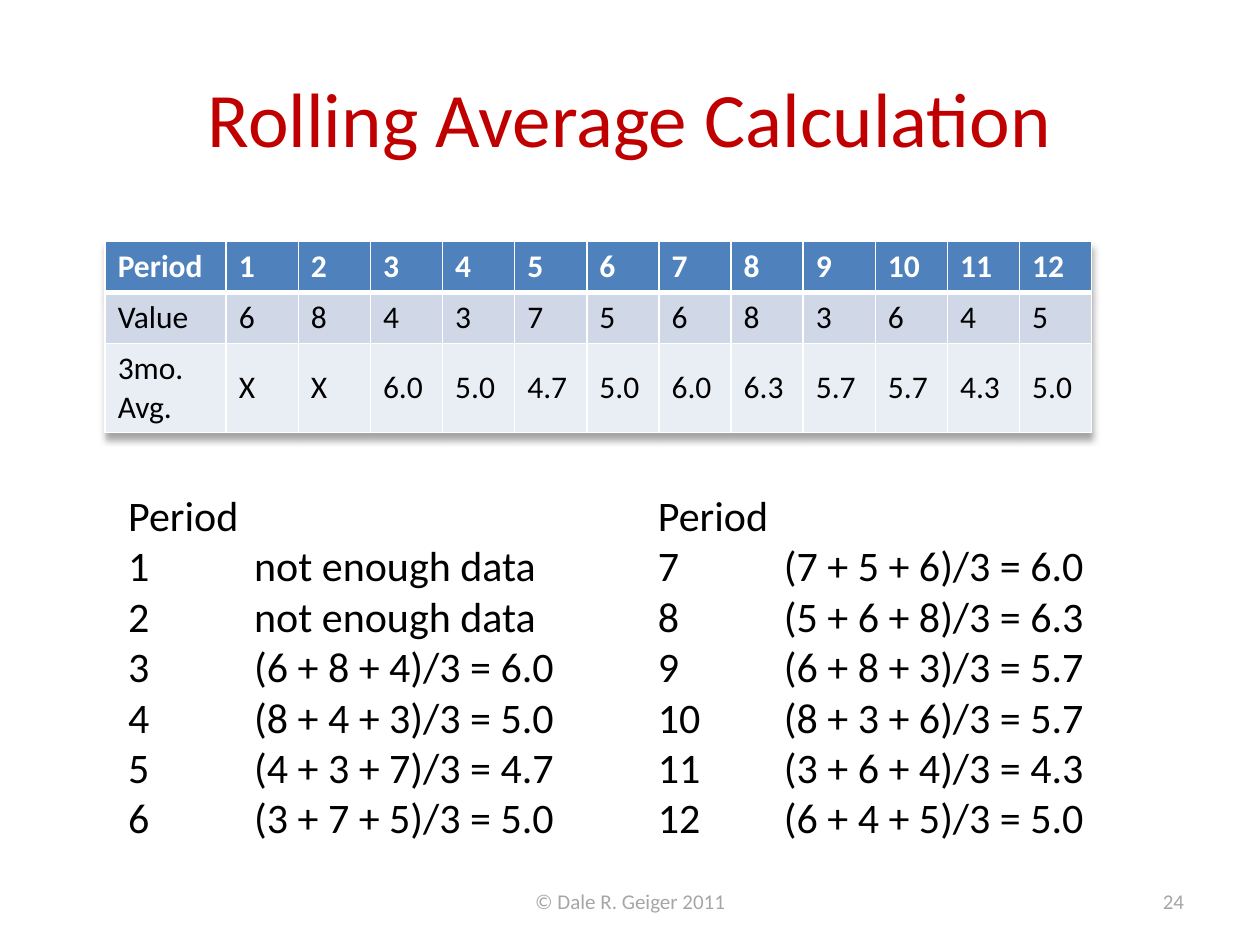
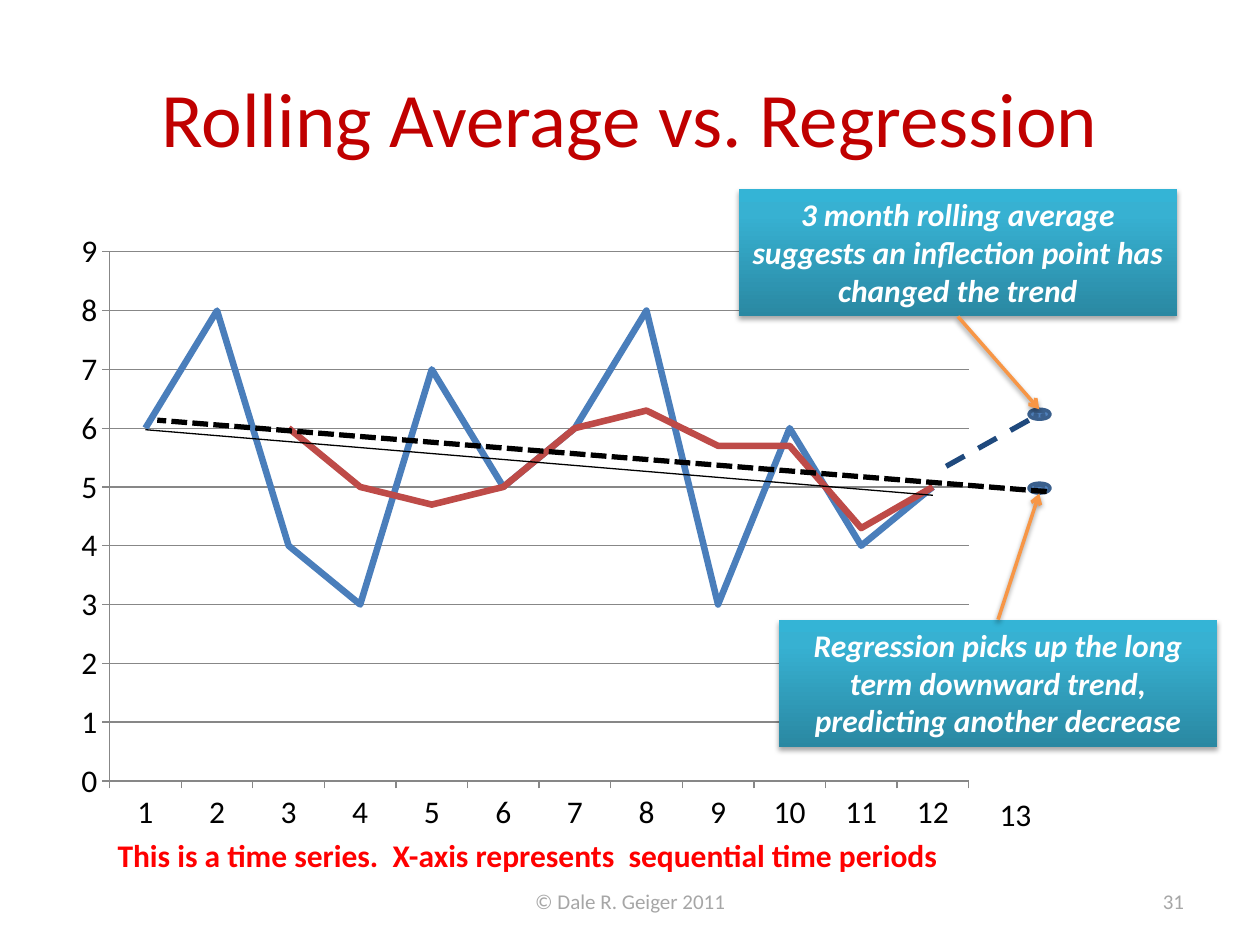
import copy

import pptx
import pptx.chart.data
import pptx.dml.color
import pptx.enum.chart
import pptx.enum.dml
import pptx.enum.shapes
import pptx.enum.text
import pptx.oxml
import pptx.oxml.ns
import pptx.util
from lxml import etree

Cm, Pt = pptx.util.Cm, pptx.util.Pt
qn = pptx.oxml.ns.qn
ALIGN = pptx.enum.text.PP_ALIGN
ANCHOR = pptx.enum.text.MSO_ANCHOR
DASH = pptx.enum.dml.MSO_LINE
SHAPE = pptx.enum.shapes.MSO_SHAPE

COLOURS = {
    "title": "C00000", "footer": "A6A6A6", "text": "000000", "light": "FFFFFF",
    "note": "FF0000", "header": "4F81BD", "band": "D0D8E8", "pale": "E9EDF4",
    "value": "4A7EBB", "average": "BE4B48", "grid": "878787", "point": "4F81BD",
    "rim": "3A5F8C", "forecast": "1F497D", "arrow": "F79646",
}
CALLOUT_GRADIENT = [(0, "2A88A2"), (0.8, "37B1D2"), (1, "34B4D6")]

# Shared text formats
TITLE = {"size": Pt(44), "color": "title"}
FOOTER = {"size": Pt(12), "color": "footer"}
LIST = {"size": Pt(24), "color": "text"}
LABEL = {"size": Pt(18), "color": "text"}
HEADER = {"size": Pt(18), "color": "light", "bold": True}
NOTE = {"size": Pt(18), "color": "note", "bold": True}
CALLOUT = {"size": Pt(18), "color": "light", "bold": True, "italic": True}

# The time series and its three-month rolling average
VALUES = [6, 8, 4, 3, 7, 5, 6, 8, 3, 6, 4, 5]
PERIODS = range(1, len(VALUES) + 1)
AVERAGES = [None if n < 3 else round(sum(VALUES[n - 3:n]) / 3, 1) for n in PERIODS]


def rgb(name):
    return pptx.dml.color.RGBColor.from_string(COLOURS.get(name, name))


def set_font(font, style):
    font.name = "Calibri"
    for attribute, value in style.items():
        if attribute == "color":
            font.color.rgb = rgb(value)
        else:
            setattr(font, attribute, value)


def write(frame, lines, style, align=ALIGN.LEFT):
    frame.text = "\n".join(lines)
    for paragraph in frame.paragraphs:
        paragraph.alignment = align
        for run in paragraph.runs:
            set_font(run.font, style)


def place(shape, box):
    for attribute, value in zip(("left", "top", "width", "height"), box):
        setattr(shape, attribute, Cm(value))


def add_effects(properties, shadow=None):
    """Append an effect list; shadow is opacity in percent, blur and distance in points."""
    effects = etree.SubElement(properties, qn("a:effectLst"))
    if shadow:
        opacity, blur, distance = shadow
        outer = etree.SubElement(effects, qn("a:outerShdw"), blurRad=str(Pt(blur)),
                                 dist=str(Pt(distance)), dir="5400000", rotWithShape="0")
        black = etree.SubElement(outer, qn("a:srgbClr"), val=COLOURS["text"])
        etree.SubElement(black, qn("a:alpha"), val=str(opacity * 1000))
    return effects


def add_text(slide, box, text, style, align=ALIGN.LEFT, anchor=ANCHOR.TOP, wrap=True):
    textbox = slide.shapes.add_textbox(*map(Cm, box))
    textbox.text_frame.word_wrap = wrap
    textbox.text_frame.vertical_anchor = anchor
    write(textbox.text_frame, [text], style, align)


def add_slide(deck, layout, title, number):
    """Start a slide with the shared title and footer."""
    slide = deck.slides.add_slide(deck.slide_layouts[layout])
    heading = slide.shapes.title
    place(heading, (1.27, 0.76, 22.86, 3.18))
    heading.text_frame.vertical_anchor = ANCHOR.MIDDLE
    write(heading.text_frame, [title], TITLE, ALIGN.CENTER)
    add_text(slide, (8.68, 17.65, 8.05, 1.02), "© Dale R. Geiger 2011", FOOTER,
             ALIGN.CENTER, ANCHOR.MIDDLE)
    add_text(slide, (18.2, 17.65, 5.92, 1.02), str(number), FOOTER,
             ALIGN.RIGHT, ANCHOR.MIDDLE)
    return slide


def set_borders(cell, bottom):
    properties = cell._tc.get_or_add_tcPr()
    for side, width in (("L", 1), ("R", 1), ("T", 1), ("B", bottom)):
        border = etree.SubElement(properties, qn("a:ln" + side), w=str(Pt(width)))
        fill = etree.SubElement(border, qn("a:solidFill"))
        etree.SubElement(fill, qn("a:srgbClr"), val=COLOURS["light"])


def add_period_table(slide):
    averages = ["X" if average is None else f"{average:.1f}" for average in AVERAGES]
    rows = [
        (["Period", *PERIODS], HEADER, "header", 1.02, ANCHOR.TOP, 3),
        (["Value", *VALUES], LABEL, "band", 1.03, ANCHOR.MIDDLE, 1),
        (["3mo. Avg.", *averages], LABEL, "pale", 1.8, ANCHOR.MIDDLE, 1),
    ]
    table = slide.shapes.add_table(len(rows), len(VALUES) + 1, Cm(2.12), Cm(4.87),
                                   Cm(19.89), Cm(3.85)).table
    for index, column in enumerate(table.columns):
        column.width = Cm(17.45) // len(VALUES) if index else Cm(2.44)
    for row, (texts, style, fill, height, anchor, bottom) in zip(table.rows, rows):
        row.height = Cm(height)
        for cell, text in zip(row.cells, texts):
            write(cell.text_frame, [str(text)], style)
            cell.vertical_anchor = anchor
            set_borders(cell, bottom)
            cell.fill.solid()
            cell.fill.fore_color.rgb = rgb(fill)
    table_properties = table._tbl.tblPr
    table_properties.insert(0, add_effects(table_properties, (35, 4, 3)))


def working(period):
    """Show how the average of one period is worked out."""
    if period < 3:
        return f"{period}\tnot enough data"
    terms = " + ".join(map(str, VALUES[period - 3:period]))
    return f"{period}\t({terms})/3 = {AVERAGES[period - 1]:.1f}"


def fill_workings(placeholder, left, periods):
    place(placeholder, (left, 9.74, 10.06, 7.44))
    frame = placeholder.text_frame
    frame.auto_size = pptx.enum.text.MSO_AUTO_SIZE.NONE
    write(frame, ["Period", *map(working, periods)], LIST)
    layout = {"marL": 0, "indent": 0, "defTabSz": Cm(2.54)}
    for paragraph in frame.paragraphs:
        paragraph.space_before = Pt(0)
        properties = paragraph._p.get_or_add_pPr()
        for attribute, value in layout.items():
            properties.set(attribute, str(value))
        etree.SubElement(properties, qn("a:buNone"))


def add_trend(series):
    trend = pptx.oxml.parse_xml(
        f'<c:trendline {pptx.oxml.ns.nsdecls("c", "a")}><c:spPr><a:ln w="{Pt(0.75)}">'
        f'<a:solidFill><a:srgbClr val="{COLOURS["text"]}"/></a:solidFill></a:ln></c:spPr>'
        '<c:trendlineType val="linear"/><c:dispRSqr val="0"/><c:dispEq val="0"/>'
        '</c:trendline>')
    series._element.find(qn("c:cat")).addprevious(trend)


def set_plot_area(chart, **fractions):
    plot_area = chart._chartSpace.chart.plotArea
    for old in plot_area.findall(qn("c:layout")):
        plot_area.remove(old)
    layout = etree.Element(qn("c:layout"))
    manual = etree.SubElement(layout, qn("c:manualLayout"))
    settings = {"layoutTarget": "inner", "xMode": "edge", "yMode": "edge", **fractions}
    for tag, value in settings.items():
        etree.SubElement(manual, qn("c:" + tag), val=str(value))
    plot_area.insert(0, layout)


def add_series_chart(slide):
    data = pptx.chart.data.CategoryChartData()
    data.categories = [str(period) for period in PERIODS]
    data.add_series("Series 1", VALUES)
    data.add_series("Series 2", AVERAGES)
    chart = slide.shapes.add_chart(pptx.enum.chart.XL_CHART_TYPE.LINE, Cm(1.28), Cm(4.45),
                                   Cm(18.62), Cm(12.55), data).chart
    chart.has_legend = chart.has_title = False
    set_font(chart.font, LABEL)
    set_plot_area(chart, x=0.05, y=0.05, w=0.93, h=0.85)
    chart.plots[0].vary_by_categories = False
    for series, colour in zip(chart.plots[0].series, ("value", "average")):
        series.smooth = False
        series.marker.style = pptx.enum.chart.XL_MARKER_STYLE.NONE
        series.format.line.width = Pt(3.75)
        series.format.line.color.rgb = rgb(colour)
    add_trend(chart.plots[0].series[0])

    scale = {"minimum_scale": 0, "maximum_scale": 9, "major_unit": 1,
             "has_major_gridlines": True}
    for attribute, value in scale.items():
        setattr(chart.value_axis, attribute, value)
    lines = [chart.value_axis.major_gridlines.format.line]
    for axis in (chart.value_axis, chart.category_axis):
        axis.major_tick_mark = pptx.enum.chart.XL_TICK_MARK.OUTSIDE
        lines.append(axis.format.line)
    for line in lines:
        line.width = Pt(0.75)
        line.color.rgb = rgb("grid")


def add_forecast_point(slide, top):
    point = slide.shapes.add_shape(SHAPE.SMILEY_FACE, Cm(20.74), Cm(top), Cm(0.43), Cm(0.2))
    point.rotation = 180
    point.fill.solid()
    point.fill.fore_color.rgb = rgb("point")
    point.line.color.rgb = rgb("rim")
    point.line.width = Pt(2)
    point.shadow.inherit = False


def add_line(slide, ends, colour, width, dash=None, shadow=None):
    line = slide.shapes.add_connector(pptx.enum.shapes.MSO_CONNECTOR.STRAIGHT,
                                      *map(Cm, ends))
    line.line.color.rgb = rgb(colour)
    line.line.width = Pt(width)
    if dash:
        line.line.dash_style = dash
    add_effects(line._element.spPr, shadow)
    return line


def add_callout(slide, left, top, text):
    callout = slide.shapes.add_shape(SHAPE.RECTANGLE, Cm(left), Cm(top), Cm(8.84), Cm(2.57))
    fill = callout.fill
    fill.gradient()
    fill.gradient_angle = 90
    stops = callout._element.spPr.find(".//" + qn("a:gsLst"))
    stops.append(copy.deepcopy(stops[-1]))
    for stop, (position, colour) in zip(fill.gradient_stops, CALLOUT_GRADIENT):
        stop.position = position
        stop.color.rgb = rgb(colour)
    callout.line.fill.background()
    add_effects(callout._element.spPr, (35, 3.1, 1.8))
    callout.text_frame.word_wrap = True
    callout.text_frame.vertical_anchor = ANCHOR.TOP
    write(callout.text_frame, [text], CALLOUT, ALIGN.CENTER)
    return callout


def add_pointer(slide, callout, side, tip_y):
    """Lead an arrow from the middle of a callout's side to a forecast point."""
    pointer = add_line(slide, (0, 0, 20.95, tip_y), "arrow", 2, shadow=(38, 3.1, 1.6))
    pointer.begin_connect(callout, side)
    etree.SubElement(pointer.line._get_or_add_ln(), qn("a:tailEnd"), type="arrow")


def build_calculation(deck):
    slide = add_slide(deck, 3, "Rolling Average Calculation", 24)
    add_period_table(slide)
    fill_workings(slide.placeholders[1], 2.33, PERIODS[:6])
    fill_workings(slide.placeholders[2], 13.01, PERIODS[6:])


def build_comparison(deck):
    slide = add_slide(deck, 5, "Rolling Average vs. Regression", 31)
    add_series_chart(slide)
    add_text(slide, (2.12, 16.72, 17.2, 1.03),
             "This is a time series.  X-axis represents  sequential time periods",
             NOTE, wrap=False)
    add_text(slide, (19.9, 15.9, 2.12, 1.03), "13", LABEL)

    # Forecasts for period 13
    add_forecast_point(slide, 9.74)
    add_line(slide, (21.1, 9.91, 3.17, 8.47), "text", 3, DASH.SQUARE_DOT)
    add_line(slide, (20.74, 8.47, 18.84, 9.53), "forecast", 3, DASH.DASH)
    add_forecast_point(slide, 8.25)

    # Callouts
    rolling = add_callout(slide, 14.89, 3.81, "3 month rolling average suggests "
                          "an inflection point has changed the trend")
    regression = add_callout(slide, 15.7, 12.49, "Regression picks up the long term "
                             "downward trend, predicting another decrease")
    add_pointer(slide, rolling, 2, 8.25)
    add_pointer(slide, regression, 0, 9.95)


def main():
    deck = pptx.Presentation()
    deck.slide_width, deck.slide_height = Cm(25.4), Cm(19.05)
    build_calculation(deck)
    build_comparison(deck)
    deck.save("out.pptx")


if __name__ == "__main__":
    main()
